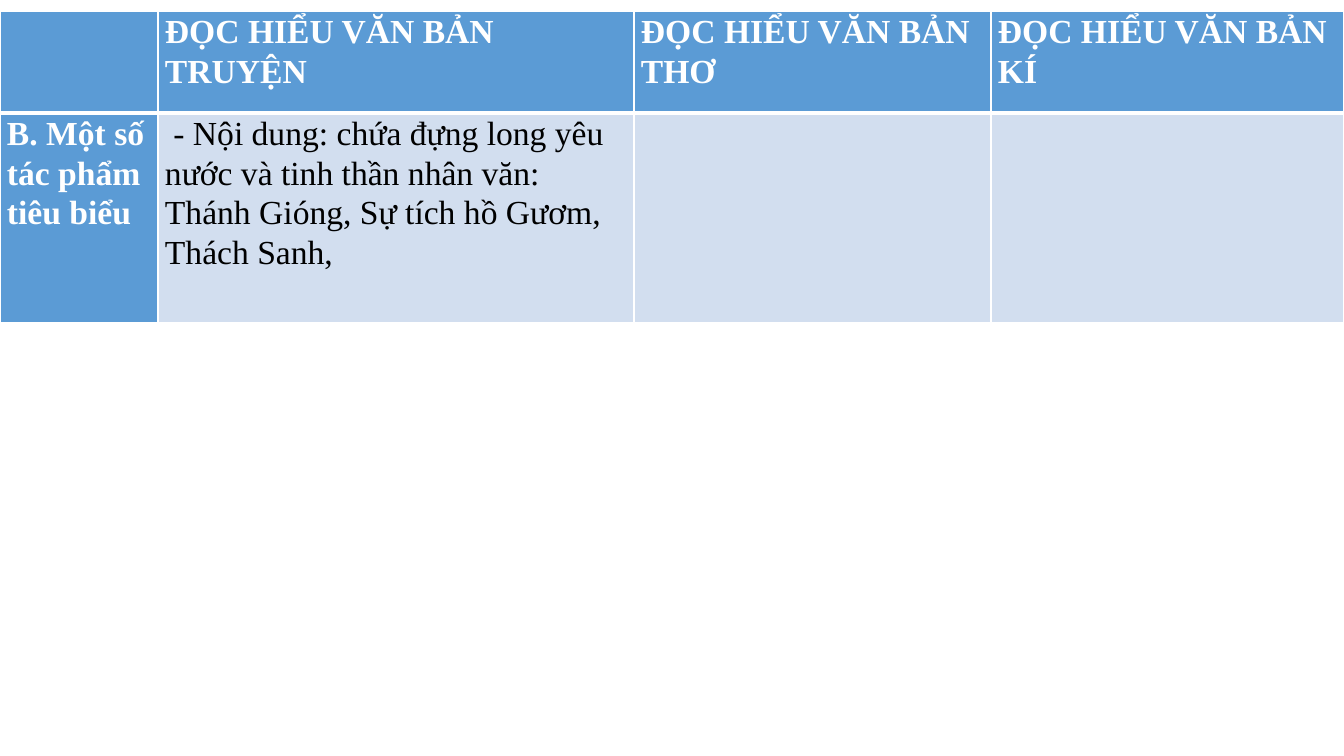
import pptx
import pptx.dml.color
import pptx.oxml
import pptx.oxml.ns
import pptx.util

COLORS = {"heading": "5B9BD5", "body": "D2DEEF", "light": "FFFFFF", "dark": "000000"}
EMU_PER_PX = 914400 / 100.8


def px(length):
    return pptx.util.Emu(round(length * EMU_PER_PX))


def rgb(name):
    return pptx.dml.color.RGBColor.from_string(COLORS[name])


class LessonSlide:
    font = "Times New Roman"
    size = pptx.util.Pt(24)

    def __init__(self, presentation):
        self.slide = presentation.slides.add_slide(presentation.slide_layouts[6])

    def table(self, left, top, widths, heights, rows):
        frame = self.slide.shapes.add_table(
            len(heights), len(widths), px(left), px(top), px(sum(widths)), px(sum(heights)))
        grid = frame.table
        grid.horz_banding = False
        for column, width in zip(grid.columns, widths):
            column.width = px(width)
        for row, height in zip(grid.rows, heights):
            row.height = px(height)
        for r, texts in enumerate(rows):
            for c, text in enumerate(texts):
                self.cell(grid.cell(r, c), text, heading=r == 0 or c == 0)
                # A thick rule separates the header row from the body
                self.borders(grid.cell(r, c), top=1 if r == 0 else 3, bottom=3 if r == 0 else 1)

    def cell(self, cell, text, heading):
        cell.fill.solid()
        cell.fill.fore_color.rgb = rgb("heading" if heading else "body")
        cell.margin_left = cell.margin_right = px(7)
        cell.margin_top = cell.margin_bottom = 0
        if not text:
            return
        paragraph = cell.text_frame.paragraphs[0]
        paragraph.line_spacing = 1.07
        paragraph.space_after = pptx.util.Pt(8)
        run = paragraph.add_run()
        run.text = text
        run.font.name = self.font
        run.font.size = self.size
        run.font.bold = heading
        run.font.color.rgb = rgb("light" if heading else "dark")

    def borders(self, cell, top, bottom):
        properties = cell._tc.get_or_add_tcPr()
        sides = {"lnL": 1, "lnR": 1, "lnT": top, "lnB": bottom}
        for position, (side, points) in enumerate(sides.items()):
            properties.insert(position, pptx.oxml.parse_xml(
                f'<a:{side} {pptx.oxml.ns.nsdecls("a")} w="{pptx.util.Pt(points)}">'
                f'<a:solidFill><a:srgbClr val="{COLORS["light"]}"/></a:solidFill></a:{side}>'))


def main():
    presentation = pptx.Presentation()
    presentation.slide_width = px(1344)
    presentation.slide_height = px(756)
    lesson = LessonSlide(presentation)

    # Reading genres across, representative works below
    genres = ["TRUYỆN", "THƠ", "KÍ"]
    header = [""] + [f"ĐỌC HIỂU VĂN BẢN {genre}" for genre in genres]
    works = [
        "B. Một số tác phẩm tiêu biểu",
        " - Nội dung: chứa đựng long yêu nước và tinh thần nhân văn: "
        "Thánh Gióng, Sự tích hồ Gươm, Thách Sanh,",
        "",
        "",
    ]
    lesson.table(0, 11, [158, 476, 357, 353], [102, 210], [header, works])

    presentation.save("out.pptx")


if __name__ == "__main__":
    main()
